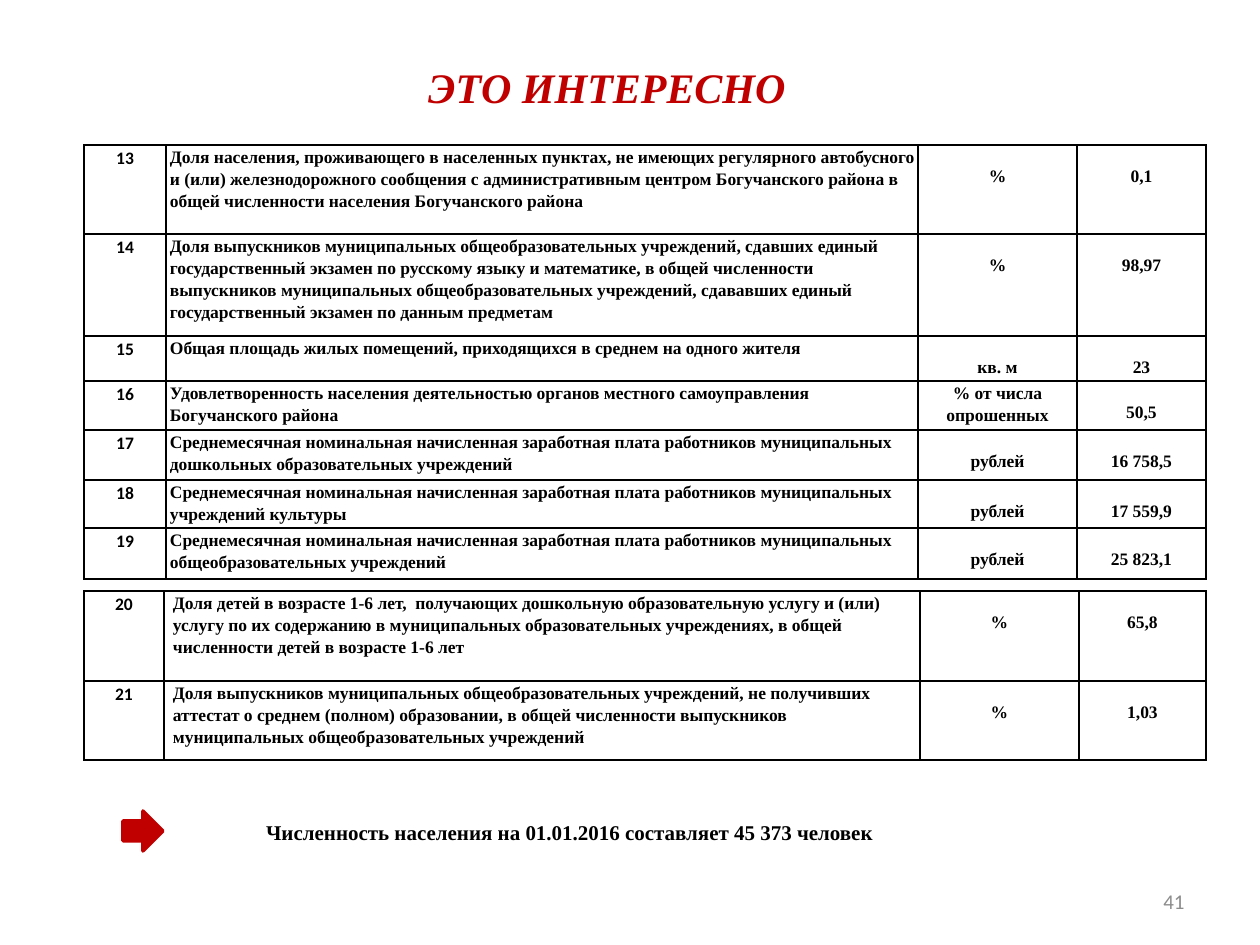
from pptx import Presentation
from pptx.dml.color import RGBColor
from pptx.enum.shapes import MSO_SHAPE as Shape
from pptx.enum.text import MSO_ANCHOR as Anchor, PP_ALIGN as Align
from pptx.oxml import parse_xml
from pptx.oxml.ns import nsdecls
from pptx.util import Emu, Pt

RED = RGBColor(0xC0, 0x00, 0x00)
BLACK = RGBColor(0x00, 0x00, 0x00)
GREY = RGBColor(0x8C, 0x8C, 0x8C)
SERIF, SANS = "Times New Roman", "Calibri"
DROP = 19  # how far units and values sit below the cell top

# Each row: height, number, indicator, unit, unit drop, value
MAIN = [
    (89, "13", "Доля населения, проживающего в населенных пунктах, не имеющих "
     "регулярного автобусного и (или) железнодорожного сообщения с "
     "административным центром Богучанского района в общей численности "
     "населения Богучанского района", "%", DROP, "0,1"),
    (102, "14", "Доля выпускников муниципальных общеобразовательных учреждений, "
     "сдавших единый государственный экзамен по русскому языку и математике, "
     "в общей численности выпускников муниципальных общеобразовательных "
     "учреждений, сдававших единый государственный экзамен по данным предметам",
     "%", DROP, "98,97"),
    (45, "15", "Общая площадь жилых помещений, приходящихся в среднем на одного "
     "жителя", "кв. м", DROP, "23"),
    (49, "16", "Удовлетворенность населения деятельностью органов местного "
     "самоуправления Богучанского района", "% от числа опрошенных", 0, "50,5"),
    (50, "17", "Среднемесячная номинальная начисленная заработная плата "
     "работников муниципальных дошкольных образовательных учреждений",
     "рублей", DROP, "16 758,5"),
    (48, "18", "Среднемесячная номинальная начисленная заработная плата "
     "работников муниципальных учреждений культуры",
     "рублей", DROP, "17 559,9"),
    (51, "19", "Среднемесячная номинальная начисленная заработная плата "
     "работников муниципальных общеобразовательных учреждений",
     "рублей", DROP, "25 823,1"),
]
EXTRA = [
    (90, "20", "Доля детей в возрасте 1-6 лет,  получающих дошкольную "
     "образовательную услугу и (или) услугу по их содержанию в муниципальных "
     "образовательных учреждениях, в общей численности детей в возрасте 1-6 лет",
     "%", DROP, "65,8"),
    (79, "21", "Доля выпускников муниципальных общеобразовательных учреждений, "
     "не получивших аттестат о среднем (полном) образовании, в общей "
     "численности выпускников муниципальных общеобразовательных учреждений",
     "%", DROP, "1,03"),
]


def px(n):
    return Emu(round(n * 914400 / 126))


def write(frame, text, size=10, font=SERIF, color=BLACK, bold=True,
          italic=False, align=Align.CENTER, lead=None):
    para = frame.paragraphs[0]
    para.alignment = align
    if lead:
        para.line_spacing = lead
    run = para.add_run()
    run.text = text
    face = run.font
    face.name, face.size, face.bold, face.italic = font, Pt(size), bold, italic
    face.color.rgb = color


def label(slide, box, text, **style):
    frame = slide.shapes.add_textbox(*map(px, box)).text_frame
    frame.word_wrap = True
    frame.vertical_anchor = Anchor.MIDDLE
    write(frame, text, **style)


def border(cell):
    props = cell._tc.get_or_add_tcPr()
    for at, side in enumerate(("lnL", "lnR", "lnT", "lnB")):
        props.insert(at, parse_xml(
            f'<a:{side} {nsdecls("a")} w="12700"><a:solidFill>'
            f'<a:srgbClr val="{BLACK}"/></a:solidFill></a:{side}>'))


def heading(slide, box, text):
    title = slide.shapes.title
    title.left, title.top, title.width, title.height = map(px, box)
    title.text_frame.vertical_anchor = Anchor.TOP
    write(title.text_frame, text, size=24, color=RED, italic=True)


def facts(slide, left, top, widths, rows, inset):
    """Numbered indicators with their units and values."""
    high = sum(row[0] for row in rows)
    box = map(px, (left, top, sum(widths), high))
    table = slide.shapes.add_table(len(rows), len(widths), *box).table
    table.first_row = table.horz_banding = False
    for col, width in zip(table.columns, widths):
        col.width = px(width)
    for line, (high, num, name, unit, drop, value) in zip(table.rows, rows):
        line.height = px(high)
        parts = [(num, 0, {"font": SANS}), (name, 0, {"align": Align.LEFT}),
                 (unit, drop, {}), (value, DROP, {})]
        for cell, (text, gap, style) in zip(line.cells, parts):
            cell.margin_left = cell.margin_right = px(inset)
            cell.margin_top, cell.margin_bottom = px(gap), 0
            cell.fill.background()
            border(cell)
            write(cell.text_frame, text, lead=1.15, **style)


def footnote(slide, left, top, text):
    """Arrow marker followed by the population line."""
    arrow = slide.shapes.add_shape(
        Shape.RIGHT_ARROW, *map(px, (left, top, 40, 40)))
    arrow.shadow.inherit = False
    arrow.fill.solid()
    arrow.fill.fore_color.rgb = RED
    arrow.line.color.rgb = RED
    arrow.line.width = Pt(2)
    label(slide, (left + 93, top + 2, 708, 38), text, size=12)


def main():
    deck = Presentation()
    deck.slide_width, deck.slide_height = px(1260), px(945)
    slide = deck.slides.add_slide(deck.slide_layouts[5])
    heading(slide, (292, 55, 630, 63), "ЭТО ИНТЕРЕСНО")
    facts(slide, 84, 145, (82, 752, 159, 129), MAIN, inset=4)
    facts(slide, 84, 591, (80, 756, 159, 127), EXTRA, inset=9)
    footnote(slide, 123, 811,
             "Численность населения на 01.01.2016 составляет 45 373 человек")
    # Page number
    label(slide, (903, 876, 294, 50), "41", size=12, font=SANS, color=GREY,
          bold=False, align=Align.RIGHT)
    deck.save("out.pptx")


if __name__ == "__main__":
    main()
